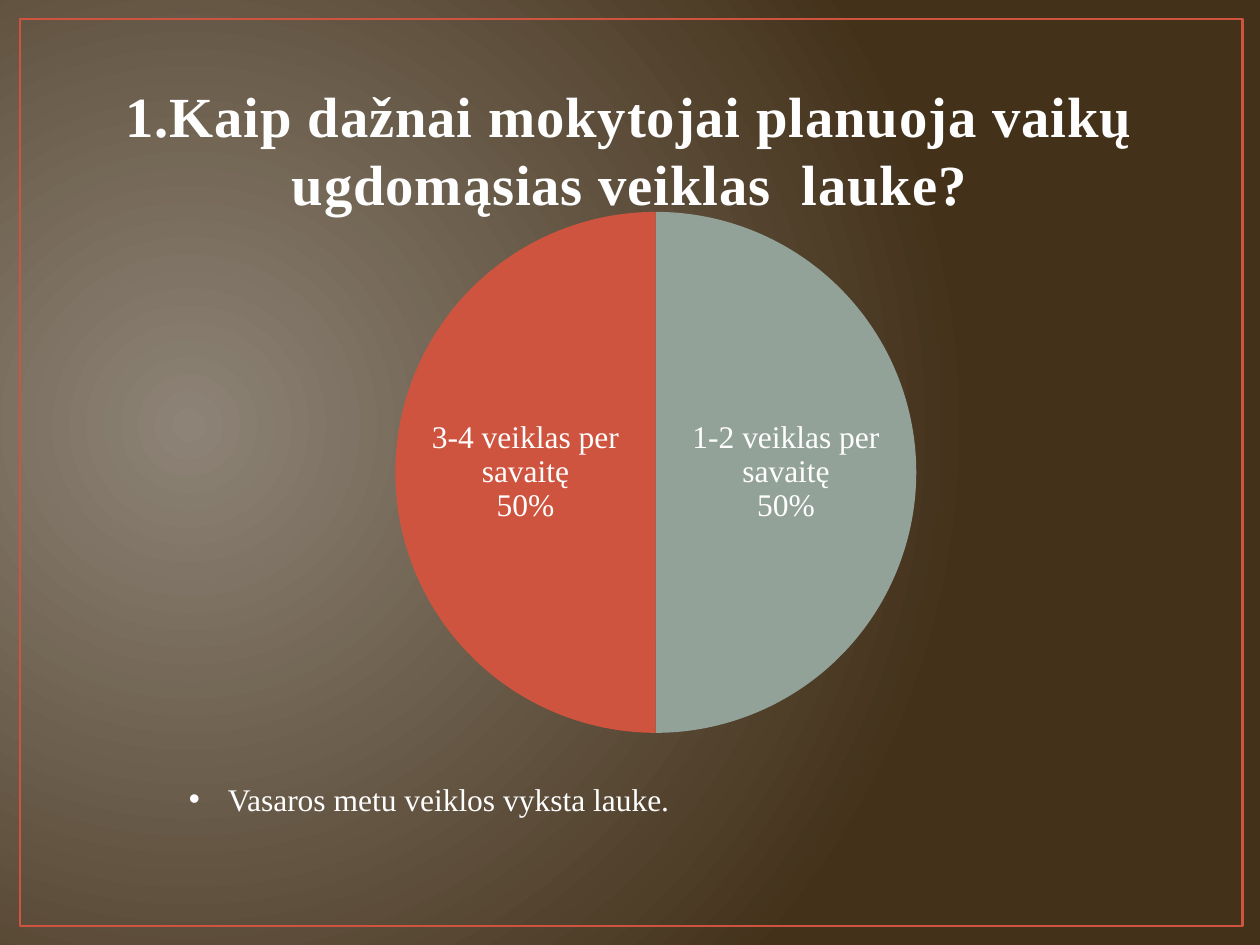
from lxml.etree import SubElement
from pptx import Presentation
from pptx.chart.data import CategoryChartData
from pptx.dml.color import RGBColor
from pptx.enum.chart import XL_CHART_TYPE as ChartType, XL_LABEL_POSITION as LabelPosition
from pptx.enum.shapes import MSO_SHAPE as Shape
from pptx.enum.text import MSO_ANCHOR as Anchor, PP_ALIGN as Align
from pptx.oxml import parse_xml
from pptx.oxml.ns import nsdecls, qn
from pptx.util import Inches, Pt

TITLE = "1.Kaip dažnai mokytojai planuoja vaikų ugdomąsias veiklas  lauke?"
NOTE = "Vasaros metu veiklos vyksta lauke."
WHITE = RGBColor(0xFE, 0xFE, 0xFE)
PURE_WHITE = RGBColor(0xFF, 0xFF, 0xFF)
RED = RGBColor(0xCF, 0x54, 0x3F)
SAGE = RGBColor(0x93, 0xA2, 0x99)
ANSWERS = [
    ("1-2 veiklas per savaitę", 50, SAGE),
    ("3-4 veiklas per savaitę", 50, RED),
]
GLOW = [(0, "8D8376"), (100, "43311A")]
GLOW_CENTRE = {"l": 15, "t": 50, "r": 85, "b": 60}
PIE_AREA = {"x": 0.22, "y": 0.03, "w": 0.62, "h": 0.94}
FONT = "Times New Roman"
WIDTH, HEIGHT = 10, 7.5


def box(left, top, width, height):
    return [Inches(length) for length in (left, top, width, height)]


def add_text(slide, text, place, size, color, bold=False, align=Align.LEFT,
             anchor=Anchor.TOP, spacing=0, bullet_indent=0):
    frame = slide.shapes.add_textbox(*place).text_frame
    frame.word_wrap = True
    frame.vertical_anchor = anchor
    paragraph = frame.paragraphs[0]
    paragraph.alignment = align
    run = paragraph.add_run()
    run.text = text
    font = run.font
    font.name, font.size, font.bold = FONT, Pt(size), bold
    font.color.rgb = color
    if spacing:
        run._r.get_or_add_rPr().set("spc", str(int(spacing * 100)))
    if bullet_indent:
        properties = paragraph._p.get_or_add_pPr()
        properties.set("marL", str(Inches(bullet_indent)))
        properties.set("indent", str(-Inches(bullet_indent)))
        SubElement(properties, qn("a:buFont"), typeface="Arial")
        SubElement(properties, qn("a:buChar"), char="•")


def paint_background(slide):
    slide.background.fill.solid()
    solid = slide.element.find(".//" + qn("p:bgPr")).find(qn("a:solidFill"))
    stops = "".join(f'<a:gs pos="{share * 1000}"><a:srgbClr val="{color}"/></a:gs>'
                    for share, color in GLOW)
    centre = " ".join(f'{side}="{share * 1000}"' for side, share in GLOW_CENTRE.items())
    gradient = parse_xml(
        f'<a:gradFill {nsdecls("a")} rotWithShape="1"><a:gsLst>{stops}</a:gsLst>'
        f'<a:path path="circle"><a:fillToRect {centre}/></a:path></a:gradFill>')
    solid.getparent().replace(solid, gradient)


def add_frame(slide):
    frame = slide.shapes.add_shape(Shape.RECTANGLE, *box(0.16, 0.15, 9.7, 7.2))
    frame.shadow.inherit = False
    frame.fill.background()
    frame.line.color.rgb = RED
    frame.line.width = Pt(1.5)


def add_pie(slide):
    data = CategoryChartData()
    data.categories = [answer for answer, _, _ in ANSWERS]
    data.add_series("Series 1", [value for _, value, _ in ANSWERS])
    chart = slide.shapes.add_chart(ChartType.PIE, *box(1.67, 1.53, 6.67, 4.44), data).chart
    chart.has_title = chart.has_legend = False
    plot = chart.plots[0]
    plot.vary_by_categories = True
    for index, (_, _, color) in enumerate(ANSWERS):
        point = plot.series[0].points[index]
        point.format.fill.solid()
        point.format.fill.fore_color.rgb = color
        point.format.line.fill.background()
    plot.has_data_labels = True
    labels = plot.data_labels
    labels.show_percentage = labels.show_category_name = True
    labels.show_value = False
    labels.position = LabelPosition.CENTER
    for font, name in ((chart.font, "Cabin"), (labels.font, FONT)):
        font.name, font.size = name, Pt(18)
        font.color.rgb = PURE_WHITE

    area = chart._chartSpace.find(".//" + qn("c:plotArea"))
    layout = area.find(qn("c:layout"))
    if layout is None:
        layout = parse_xml(f'<c:layout {nsdecls("c")}/>')
        area.insert(0, layout)
    manual = SubElement(layout, qn("c:manualLayout"))
    SubElement(manual, qn("c:layoutTarget"), val="inner")
    for side in "xy":
        SubElement(manual, qn(f"c:{side}Mode"), val="edge")
    for side, share in PIE_AREA.items():
        SubElement(manual, qn(f"c:{side}"), val=str(share))


def main():
    presentation = Presentation()
    presentation.slide_width, presentation.slide_height = Inches(WIDTH), Inches(HEIGHT)
    slide = presentation.slides.add_slide(presentation.slide_layouts[6])
    paint_background(slide)
    add_frame(slide)
    add_text(slide, TITLE, box(0.5, 0.52, 9, 1.25), 32.4, WHITE, bold=True,
             align=Align.CENTER, anchor=Anchor.BOTTOM, spacing=0.5)
    add_text(slide, NOTE, box(1.4, 6.14, 7.09, 0.4), 18, PURE_WHITE, bullet_indent=0.31)
    add_pie(slide)
    presentation.save("out.pptx")


if __name__ == "__main__":
    main()
